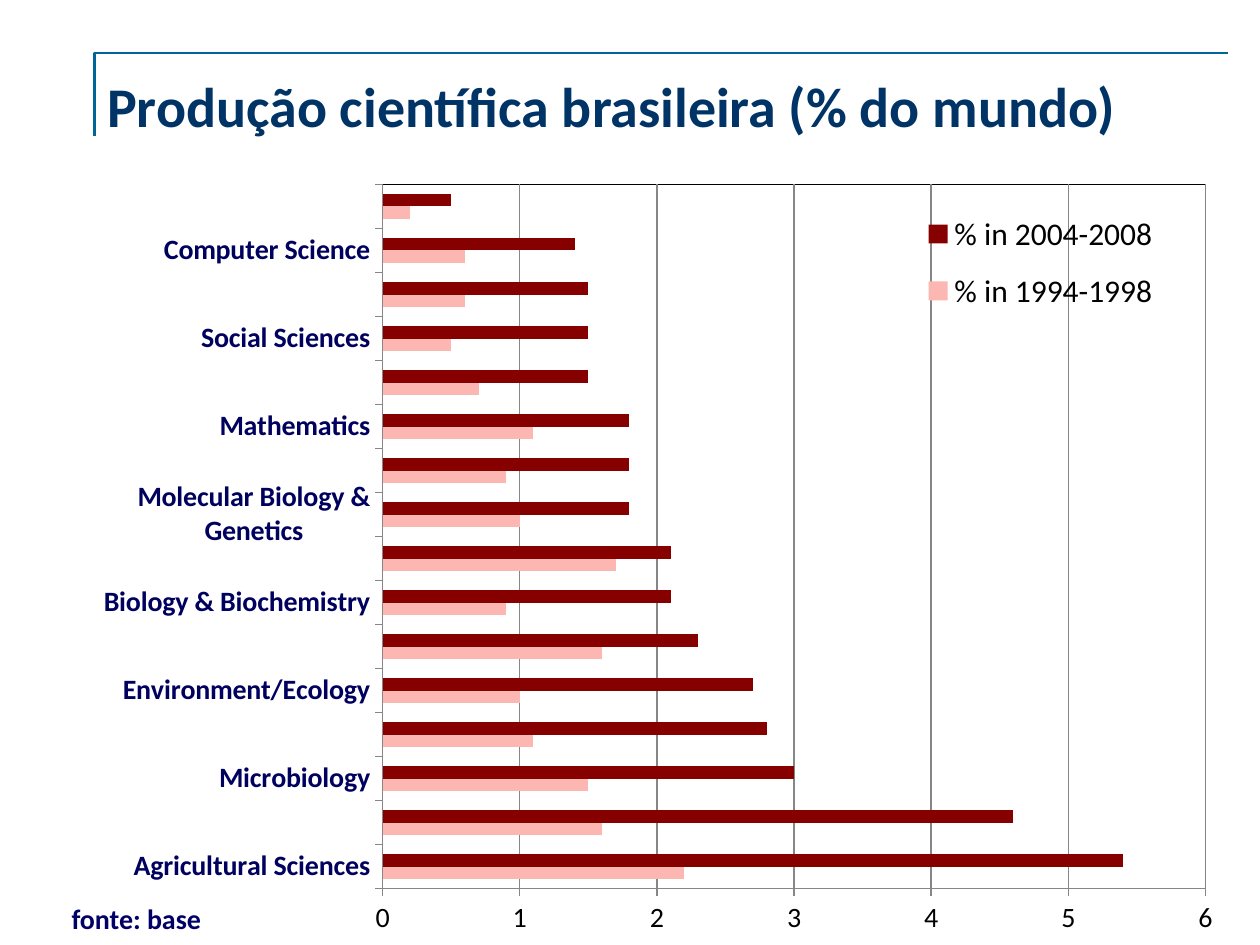
import pptx
import pptx.chart.data
import pptx.dml.color
import pptx.enum.chart
import pptx.enum.text
import pptx.oxml
import pptx.oxml.ns
import pptx.util
from pptx.util import Inches

COLORS = {"rule": "006699", "title": "003366", "source": "000066", "labels": "00005E",
          "old": "FCB7B2", "new": "860000", "black": "000000", "grid": "868686"}
qn = pptx.oxml.ns.qn


def rgb(name):
    return pptx.dml.color.RGBColor.from_string(COLORS[name])


def write(tf, text, size, color, spacing=None):
    tf.word_wrap = True
    tf.vertical_anchor = pptx.enum.text.MSO_ANCHOR.MIDDLE
    p = tf.paragraphs[0]
    p.alignment = pptx.enum.text.PP_ALIGN.LEFT
    if spacing:
        p.line_spacing = spacing
    r = p.add_run()
    r.text = text
    r.font.name, r.font.size, r.font.bold = "Calibri", pptx.util.Pt(size), True
    r.font.color.rgb = rgb(color)


def make_layout(x, y, w, h, inner=False):
    target = '<c:layoutTarget val="inner"/>' if inner else ""
    return pptx.oxml.parse_xml(
        f'<c:layout {pptx.oxml.ns.nsdecls("c")}><c:manualLayout>{target}'
        '<c:xMode val="edge"/><c:yMode val="edge"/>'
        f'<c:x val="{x}"/><c:y val="{y}"/><c:w val="{w}"/><c:h val="{h}"/>'
        '</c:manualLayout></c:layout>')


prs = pptx.Presentation()
prs.slide_width, prs.slide_height = Inches(10), Inches(7.5)
s = prs.slides.add_slide(prs.slide_layouts[5])

# Corner rule around the title
builder = s.shapes.build_freeform(Inches(0.75), Inches(1.08))
builder.add_line_segments([(Inches(0.75), Inches(0.42)), (Inches(9.75), Inches(0.42))],
                          close=False)
sp = builder.convert_to_shape()
sp.shadow.inherit = False
sp.fill.background()
sp.line.color.rgb = rgb("rule")
sp.line.width = pptx.util.Pt(1.5)

# Title
title = s.shapes.title
title.left, title.top = Inches(0.75), Inches(0.42)
title.width, title.height = Inches(8.92), Inches(0.83)
write(title.text_frame, "Produção científica brasileira (% do mundo)", 32, "title")

# Chart data: field, % in 1994-1998, % in 2004-2008
rows = [
    ("Agricultural Sciences", 2.2, 5.4),
    ("Plant & Animal Science", 1.6, 4.6),
    ("Microbiology", 1.5, 3),
    ("Pharmacology & Toxicology", 1.1, 2.8),
    ("Environment/Ecology", 1, 2.7),
    ("Physics", 1.6, 2.3),
    ("Biology & Biochemistry", 0.9, 2.1),
    ("Space Science", 1.7, 2.1),
    ("Molecular Biology & Genetics", 1, 1.8),
    ("Chemistry", 0.9, 1.8),
    ("Mathematics", 1.1, 1.8),
    ("Materials Science", 0.7, 1.5),
    ("Social Sciences", 0.5, 1.5),
    ("Engineering", 0.6, 1.5),
    ("Computer Science", 0.6, 1.4),
    ("Economics & Business", 0.2, 0.5),
]
fields, old, new = zip(*rows)
data = pptx.chart.data.CategoryChartData()
data.categories = fields
data.add_series("% in 1994-1998", old)
data.add_series("% in 2004-2008", new)

# Bar chart
chart = s.shapes.add_chart(pptx.enum.chart.XL_CHART_TYPE.BAR_CLUSTERED, Inches(0.59),
                           Inches(1.31), Inches(9.41), Inches(6.19), data).chart
chart.has_title = False
chart.font.name, chart.font.size = "Lato", pptx.util.Pt(10)
chart.font.color.rgb = rgb("black")
plot = chart.plots[0]
plot.gap_width, plot.overlap, plot.vary_by_categories = 150, 0, False
for series, color in zip(plot.series, ("old", "new")):
    series.format.fill.solid()
    series.format.fill.fore_color.rgb = rgb(color)

# Axes
cat, val = chart.category_axis, chart.value_axis
for axis, color in ((cat, "labels"), (val, "black")):
    axis.major_tick_mark = pptx.enum.chart.XL_TICK_MARK.OUTSIDE
    axis.format.line.color.rgb = rgb("grid")
    font = axis.tick_labels.font
    font.name, font.size, font.bold = "Calibri", pptx.util.Pt(16), axis is cat
    font.color.rgb = rgb(color)
val.minimum_scale, val.maximum_scale, val.major_unit = 0, 6, 1
val.has_major_gridlines = True
val.major_gridlines.format.line.color.rgb = rgb("grid")
val.tick_labels.number_format = "General"
val.tick_labels.number_format_is_linked = False

# Legend
chart.has_legend = True
legend = chart.legend
legend.position = pptx.enum.chart.XL_LEGEND_POSITION.RIGHT
legend.include_in_layout = False
legend.font.name, legend.font.size = "Calibri", pptx.util.Pt(18)
legend.font.color.rgb = rgb("black")

# Label every second field, place plot and legend, frame the plot
root = chart._chartSpace
skip = pptx.oxml.parse_xml(f'<c:tickLblSkip {pptx.oxml.ns.nsdecls("c")} val="2"/>')
root.find(".//" + qn("c:noMultiLvlLbl")).addprevious(skip)
area = root.find(".//" + qn("c:plotArea"))
for node in (area, root.find(".//" + qn("c:legend"))):
    for empty in node.findall(qn("c:layout")):
        node.remove(empty)
area.insert(0, make_layout(0.26, 0.025, 0.694, 0.903, inner=True))
root.find(".//" + qn("c:legendPos")).addnext(make_layout(0.71, 0.04, 0.21, 0.17))
area.append(pptx.oxml.parse_xml(
    f'<c:spPr {pptx.oxml.ns.nsdecls("c", "a")}><a:noFill/><a:ln w="9525"><a:solidFill>'
    f'<a:srgbClr val="{COLORS["black"]}"/></a:solidFill></a:ln></c:spPr>'))

# Source note
box = s.shapes.add_textbox(Inches(0.47), Inches(7.11), Inches(1.3), Inches(0.39))
write(box.text_frame, "fonte: base", 16, "source", spacing=0.9)

prs.save("out.pptx")
